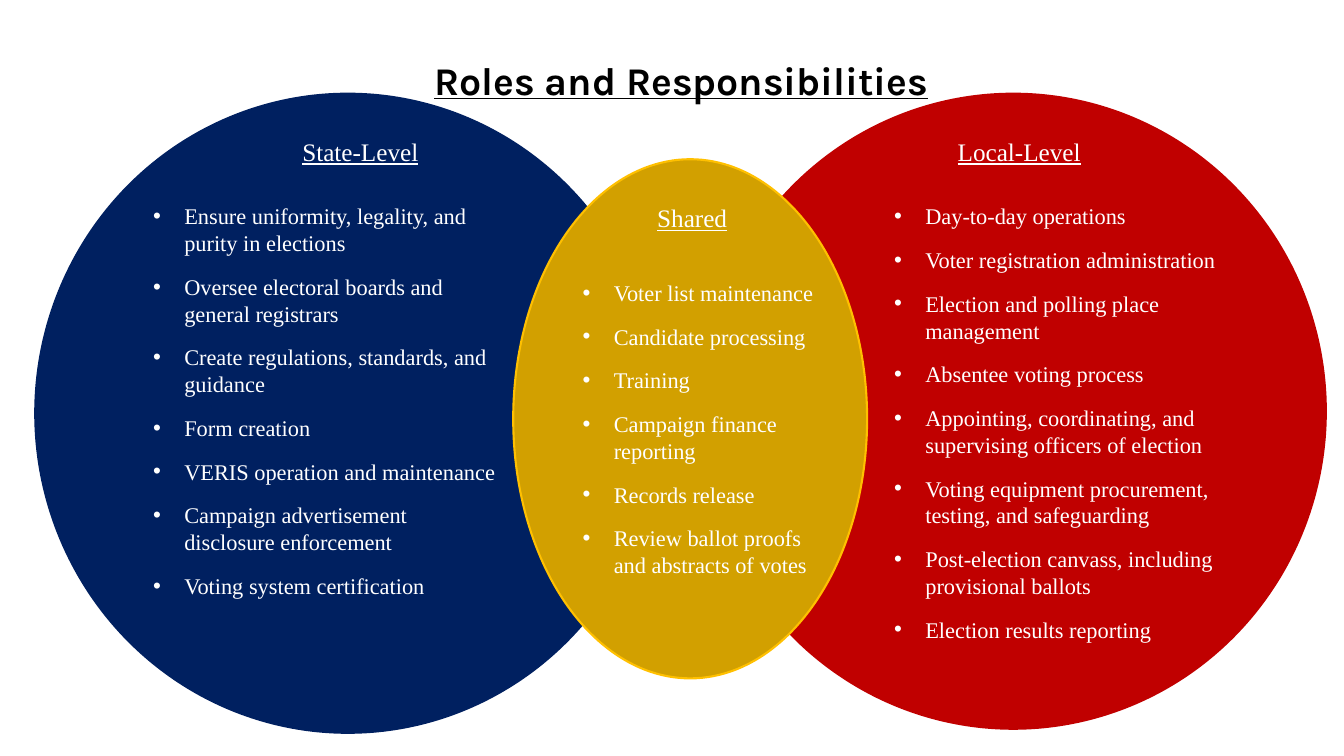
from lxml import etree
from pptx import Presentation
from pptx.dml.color import RGBColor as RGB
from pptx.enum.shapes import MSO_SHAPE as Preset
from pptx.enum.text import MSO_AUTO_SIZE as AutoSize, PP_ALIGN as Align
from pptx.oxml.ns import qn
from pptx.util import Inches, Pt

THEME = {
    "white": RGB(0xFF, 0xFF, 0xFF),
    "black": RGB(0, 0, 0),
    "navy": RGB(0x00, 0x20, 0x60),
    "red": RGB(0xC0, 0x00, 0x00),
    "gold": RGB(0xD2, 0xA0, 0x00),
    "amber": RGB(0xFF, 0xC0, 0x00),
    "outline": Pt(1.5),
    "gap": Pt(6),
    "indent": Inches(0.31),
}
FORMATS = {
    "title": {"name": "Karla", "size": Pt(28), "bold": True,
              "underline": True, "color": THEME["black"]},
    "heading": {"name": "Times New Roman", "size": Pt(18),
                "underline": True, "color": THEME["white"]},
    "duty": {"name": "Times New Roman", "size": Pt(16),
             "color": THEME["white"]},
}

TITLE = {"text": "Roles and Responsibilities", "box": (4.16, 0.51, 5.19, 0.57)}
LEVELS = [
    {
        "heading": "State-Level",
        "duties": [
            "Ensure uniformity, legality, and purity in elections",
            "Oversee electoral boards and general registrars",
            "Create regulations, standards, and guidance",
            "Form creation",
            "VERIS operation and maintenance",
            "Campaign advertisement disclosure enforcement",
            "Voting system certification",
        ],
        "circle": (0.35, 0.93, 6.2, 6.34),
        "heading_box": (2.9, 1.3, 1.44, 0.4),
        "duties_box": (1.42, 1.96, 3.67, 4.17),
        "fill": "navy", "line": "navy",
    },
    {
        "heading": "Local-Level",
        "duties": [
            "Day-to-day operations",
            "Voter registration administration",
            "Election and polling place management",
            "Absentee voting process",
            "Appointing, coordinating, and supervising officers of election",
            "Voting equipment procurement, testing, and safeguarding",
            "Post-election canvass, including provisional ballots",
            "Election results reporting",
        ],
        "circle": (6.95, 0.93, 6.2, 6.3),
        "heading_box": (9.4, 1.3, 1.48, 0.4),
        "duties_box": (8.77, 1.96, 3.46, 4.61),
        "fill": "red", "line": "red",
    },
    {
        "heading": "Shared",
        "duties": [
            "Voter list maintenance",
            "Candidate processing",
            "Training",
            "Campaign finance reporting",
            "Records release",
            "Review ballot proofs and abstracts of votes",
        ],
        "circle": (5.09, 1.58, 3.51, 5.15),
        "heading_box": (6.42, 1.96, 1.44, 0.4),
        "duties_box": (5.68, 2.72, 2.56, 3.1),
        "fill": "gold", "line": "amber",
    },
]


def add_circle(slide, level):
    circle = slide.shapes.add_shape(
        Preset.FLOWCHART_CONNECTOR, *map(Inches, level["circle"]))
    circle.shadow.inherit = False
    circle.fill.solid()
    circle.fill.fore_color.rgb = THEME[level["fill"]]
    circle.line.color.rgb = THEME[level["line"]]
    circle.line.width = THEME["outline"]


def add_bullet(paragraph):
    props = paragraph._p.get_or_add_pPr()
    props.set("marL", str(THEME["indent"]))
    props.set("indent", str(-THEME["indent"]))
    etree.SubElement(props, qn("a:buFont"), typeface="Arial")
    etree.SubElement(props, qn("a:buChar"), char="•")


def add_text(slide, box, lines, style, align=Align.LEFT, bulleted=False):
    frame = slide.shapes.add_textbox(*map(Inches, box)).text_frame
    frame.word_wrap = True
    frame.auto_size = AutoSize.SHAPE_TO_FIT_TEXT
    for index, line in enumerate(lines):
        paragraph = frame.add_paragraph() if index else frame.paragraphs[0]
        paragraph.alignment = align
        if bulleted:
            add_bullet(paragraph)
            paragraph.space_before = THEME["gap"] if index else Pt(0)
            paragraph.space_after = THEME["gap"]
        run = paragraph.add_run()
        run.text = line
        for key, value in FORMATS[style].items():
            if key == "color":
                run.font.color.rgb = value
            else:
                setattr(run.font, key, value)


def main():
    deck = Presentation()
    deck.slide_width, deck.slide_height = Inches(13.33), Inches(7.5)
    slide = deck.slides.add_slide(deck.slide_layouts[6])
    for level in LEVELS:
        add_circle(slide, level)
        add_text(slide, level["heading_box"], [level["heading"]], "heading")
        add_text(slide, level["duties_box"], level["duties"], "duty", bulleted=True)
    add_text(slide, TITLE["box"], [TITLE["text"]], "title", Align.CENTER)
    deck.save("out.pptx")


if __name__ == "__main__":
    main()
